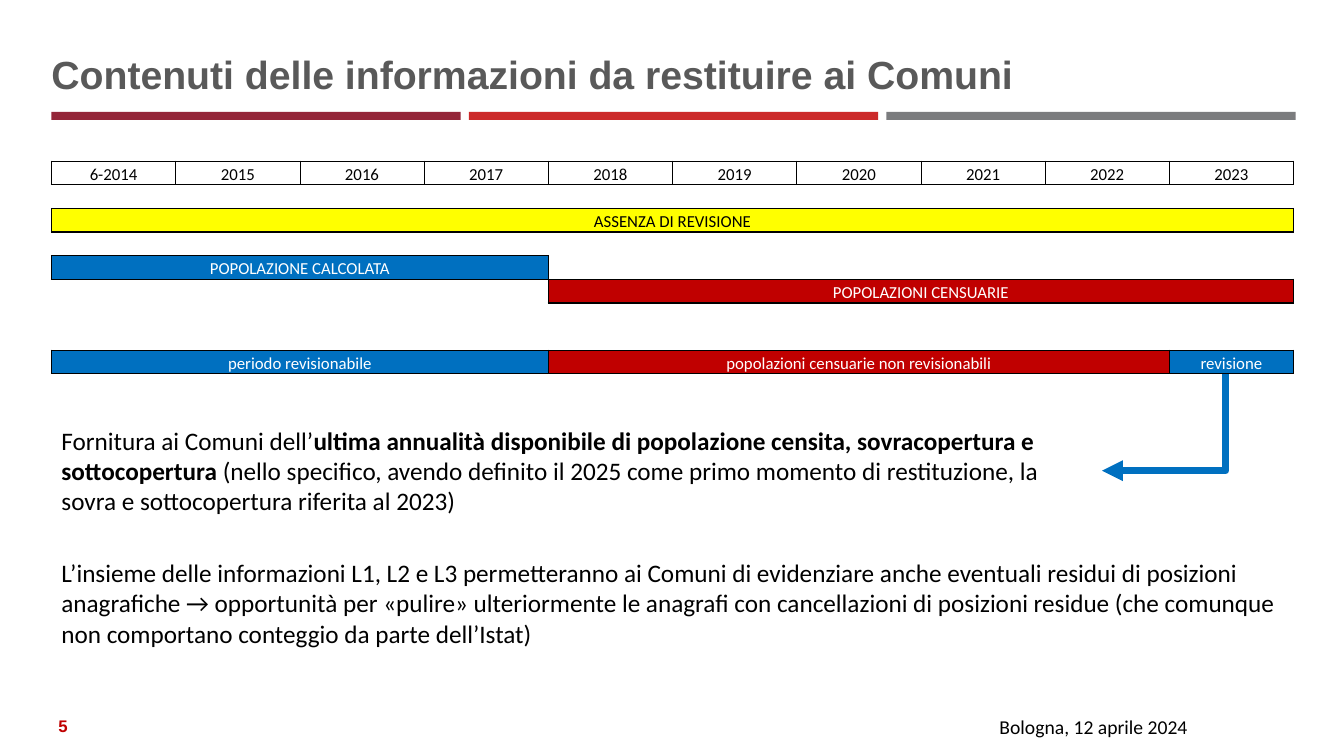
from dataclasses import dataclass

from lxml import etree
from pptx import Presentation
from pptx import util as u
from pptx.dml.color import RGBColor
from pptx.enum import shapes, text
from pptx.oxml import ns

COLOURS = {
    "black": "000000", "white": "FFFFFF", "title": "595959",
    "wine": "942639", "scarlet": "CC2A2A", "grey": "7B7C7E",
    "yellow": "FFFF00", "blue": "0070C0", "red": "C00000",
}
SLIDE_W, SLIDE_H = u.Inches(13.33), u.Inches(7.5)
YEARS = 10
TABLE_ROWS = 9
LEFT, CONTENT_W = 3.83, 92.42  # per cent of the slide's width
NO_STYLE = "{2D5ABB26-0587-4C30-8999-92F81FD0307C}"


@dataclass
class Box:
    """Place on the slide, in per cent of its width and height."""
    x: float
    y: float
    w: float
    h: float

    def emu(self) -> tuple[int, int, int, int]:
        return across(self.x), down(self.y), across(self.w), down(self.h)


@dataclass
class Label:
    box: Box
    runs: list[tuple[str, bool]]
    size: int
    colour: str = "black"
    font: str = "Calibri"
    align: text.PP_ALIGN = text.PP_ALIGN.LEFT
    anchor: text.MSO_ANCHOR = text.MSO_ANCHOR.TOP
    inset: bool = True
    leading: int | None = None


@dataclass
class Band:
    """Coloured period in the timeline, in table rows and columns."""
    row: int
    col: int
    span: int
    words: str
    fill: str | None
    colour: str = "white"
    side: float = 1


def across(share: float) -> int:
    return round(SLIDE_W * share / 100)


def down(share: float) -> int:
    return round(SLIDE_H * share / 100)


def rgb(name: str) -> RGBColor:
    return RGBColor.from_string(COLOURS[name])


def add_run(p, words: str, size: int, colour: str, font: str, bold: bool) -> None:
    r = p.add_run()
    r.text = words
    r.font.color.rgb = rgb(colour)
    for name, value in {"size": u.Pt(size), "name": font, "bold": bold}.items():
        setattr(r.font, name, value)


def add_label(s, label: Label) -> None:
    tf = s.shapes.add_textbox(*label.box.emu()).text_frame
    formats = {"word_wrap": True, "vertical_anchor": label.anchor}
    if not label.inset:
        formats |= {f"margin_{side}": 0 for side in ("left", "top", "right", "bottom")}
    for name, value in formats.items():
        setattr(tf, name, value)
    p = tf.paragraphs[0]
    p.alignment = label.align
    if label.leading:
        p.line_spacing = u.Pt(label.leading)
    for words, bold in label.runs:
        add_run(p, words, label.size, label.colour, label.font, bold)


def add_bars(s) -> None:
    gap = 0.62
    width = (CONTENT_W + 0.15 - 2 * gap) / 3
    for i, colour in enumerate(("wine", "scarlet", "grey")):
        box = Box(LEFT + i * (width + gap), 14.8, width, 1.07)
        sp = s.shapes.add_shape(shapes.MSO_SHAPE.RECTANGLE, *box.emu())
        sp.shadow.inherit = False
        sp.fill.solid()
        sp.fill.fore_color.rgb = rgb(colour)
        sp.line.fill.background()


def add_borders(cell, widths: dict[str, float]) -> None:
    tc_pr = cell._tc.get_or_add_tcPr()
    for i, (side, width) in enumerate(widths.items()):
        ln = etree.Element(ns.qn(f"a:{side}"), w=str(u.Pt(width)))
        fill = etree.SubElement(ln, ns.qn("a:solidFill"))
        etree.SubElement(fill, ns.qn("a:srgbClr"), val=COLOURS["black"])
        tc_pr.insert(i, ln)


def add_timeline(s, bands: list[Band]) -> None:
    box = Box(LEFT, 21.33, CONTENT_W, 28.13)
    tbl = s.shapes.add_table(TABLE_ROWS, YEARS, *box.emu()).table
    tbl.first_row = tbl.horz_banding = False
    tbl._tbl.tblPr.find(ns.qn("a:tableStyleId")).text = NO_STYLE
    for cell in tbl.iter_cells():
        cell.fill.background()
        for name, value in {"margin_left": 0.01, "margin_right": 0.01,
                            "margin_top": 0.01, "margin_bottom": 0}.items():
            setattr(cell, name, u.Inches(value))
        cell.vertical_anchor = text.MSO_ANCHOR.BOTTOM
        # Keeps empty rows as low as the filled ones
        etree.SubElement(cell.text_frame.paragraphs[0]._p,
                         ns.qn("a:endParaRPr"), sz="1200")
    for band in bands:
        last = band.col + band.span - 1
        for col in range(band.col, last + 1):
            add_borders(tbl.cell(band.row, col), {
                "lnL": 1 if col == 0 else band.side,
                "lnR": 1 if col == YEARS - 1 else band.side,
                "lnT": 1, "lnB": 1})
        cell = tbl.cell(band.row, band.col)
        if band.span > 1:
            cell.merge(tbl.cell(band.row, last))
        if band.fill:
            cell.fill.solid()
            cell.fill.fore_color.rgb = rgb(band.fill)
        p = cell.text_frame.paragraphs[0]
        p.alignment = text.PP_ALIGN.CENTER
        add_run(p, band.words, 12, band.colour, "Calibri", False)


def add_elbow_arrow(s) -> None:
    arrow = s.shapes.add_connector(shapes.MSO_CONNECTOR.ELBOW, across(91.22),
                                   down(49.47), across(82), down(62.27))
    arrow.line.color.rgb = rgb("blue")
    arrow.line.width = u.Pt(5)
    sp_pr = arrow._element.spPr
    guides = sp_pr.find(ns.qn("a:prstGeom")).get_or_add_avLst()
    etree.SubElement(guides, ns.qn("a:gd"), name="adj1", fmla="val 0")
    etree.SubElement(sp_pr.find(ns.qn("a:ln")), ns.qn("a:tailEnd"), type="triangle")
    etree.SubElement(sp_pr, ns.qn("a:effectLst"))


BANDS = [Band(0, i, 1, "6-2014" if i == 0 else str(2014 + i), None, "black", 0.5)
         for i in range(YEARS)] + [
    Band(2, 0, 10, "ASSENZA DI REVISIONE", "yellow", "black"),
    Band(4, 0, 4, "POPOLAZIONE CALCOLATA", "blue"),
    Band(5, 4, 6, "POPOLAZIONI CENSUARIE", "red"),
    Band(8, 0, 4, "periodo revisionabile", "blue"),
    Band(8, 4, 5, "popolazioni censuarie non revisionabili", "red"),
    Band(8, 9, 1, "revisione", "blue"),
]
LABELS = [
    Label(Box(LEFT, 7.33, CONTENT_W, 5.6),
          [("Contenuti delle informazioni da restituire ai Comuni", True)], 28, "title",
          "Arial", anchor=text.MSO_ANCHOR.BOTTOM, inset=False, leading=30),
    Label(Box(LEFT, 55.6, 78.17, 13.47), [
        ("Fornitura ai Comuni dell’", False),
        ("ultima annualità disponibile di popolazione censita, sovracopertura e "
         "sottocopertura", True),
        (" (nello specifico, avendo definito il 2025 come primo momento di "
         "restituzione, la sovra e sottocopertura riferita al 2023)", False)], 18),
    Label(Box(LEFT, 73.07, CONTENT_W, 13.47), [
        ("L’insieme delle informazioni L1, L2 e L3 permetteranno ai Comuni di "
         "evidenziare anche eventuali residui di posizioni anagrafiche → opportunità "
         "per «pulire» ulteriormente le anagrafi con cancellazioni di posizioni "
         "residue (che comunque non comportano conteggio da parte dell’Istat)",
         False)], 18),
    Label(Box(37.96, 93.87, 51.16, 4.53), [("Bologna, 12 aprile 2024", False)], 14,
          align=text.PP_ALIGN.RIGHT),
    Label(Box(2.63, 93.33, 4.13, 5.33), [("5", True)], 12, "red", "Arial",
          text.PP_ALIGN.CENTER, text.MSO_ANCHOR.MIDDLE),
]


def main() -> None:
    prs = Presentation()
    prs.slide_width, prs.slide_height = SLIDE_W, SLIDE_H
    s = prs.slides.add_slide(prs.slide_layouts[6])
    add_bars(s)
    add_timeline(s, BANDS)
    # Title, body paragraphs and footer
    for label in LABELS:
        add_label(s, label)
    add_elbow_arrow(s)
    prs.save("out.pptx")


if __name__ == "__main__":
    main()
